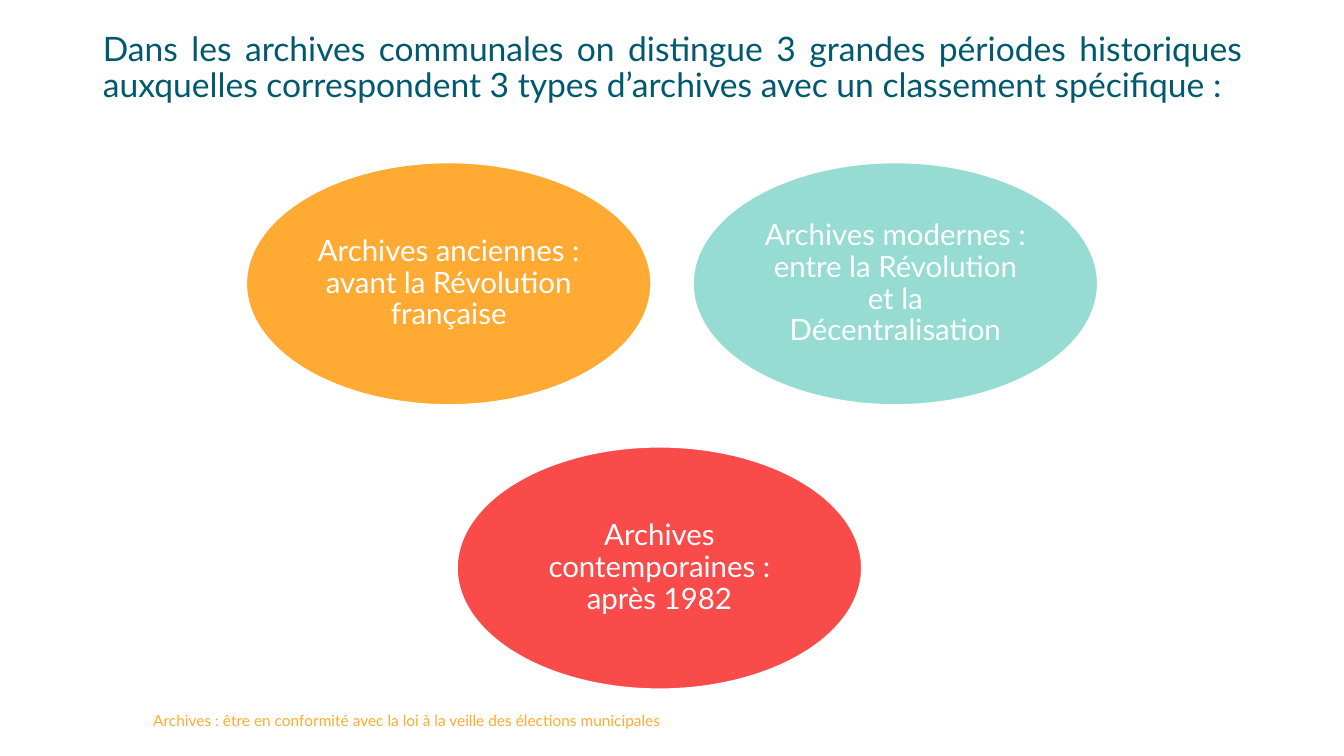
"""Build the slide on the three historical periods of communal archives."""
from dataclasses import dataclass

from pptx import Presentation
from pptx.dml.color import RGBColor
from pptx.enum.shapes import MSO_SHAPE
from pptx.enum.text import MSO_ANCHOR, MSO_AUTO_SIZE, PP_ALIGN
from pptx.util import Inches, Pt


@dataclass(frozen=True)
class Theme:
    font: str = "Lato"
    teal: str = "00596E"
    orange: str = "FFAA32"
    mint: str = "96DCD2"
    red: str = "FA4B4B"
    white: str = "FFFFFF"
    title_size: int = 24
    period_size: int = 21
    footer_size: int = 11
    line_spacing: float = 0.9


class SlideBuilder:
    def __init__(self, slide, theme):
        self.slide = slide
        self.theme = theme

    def set_text(self, shape, text, size, color, alignment, anchor, inset=None):
        text_frame = shape.text_frame
        text_frame.text = text
        text_frame.word_wrap = True
        text_frame.auto_size = MSO_AUTO_SIZE.NONE
        text_frame.vertical_anchor = anchor
        if inset is not None:
            text_frame.margin_left = text_frame.margin_right = Inches(inset)
            text_frame.margin_top = text_frame.margin_bottom = Inches(inset)
        paragraph = text_frame.paragraphs[0]
        paragraph.alignment = alignment
        paragraph.line_spacing = self.theme.line_spacing
        font = paragraph.runs[0].font
        font.name = self.theme.font
        font.size = Pt(size)
        font.color.rgb = RGBColor.from_string(color)

    def title(self, text, left, top, width, height):
        shape = self.slide.shapes.title
        shape.left, shape.top = Inches(left), Inches(top)
        shape.width, shape.height = Inches(width), Inches(height)
        self.set_text(shape, text, self.theme.title_size, self.theme.teal,
                      PP_ALIGN.JUSTIFY, MSO_ANCHOR.TOP)

    def period(self, text, left, top, color, width=4.02, height=2.41):
        shape = self.slide.shapes.add_shape(
            MSO_SHAPE.OVAL, Inches(left), Inches(top), Inches(width), Inches(height))
        shape.shadow.inherit = False
        shape.fill.solid()
        shape.fill.fore_color.rgb = RGBColor.from_string(color)
        shape.line.color.rgb = RGBColor.from_string(self.theme.white)
        shape.line.width = Pt(1.5)
        self.set_text(shape, text, self.theme.period_size, self.theme.white,
                      PP_ALIGN.CENTER, MSO_ANCHOR.MIDDLE, 0.09)

    def footer(self, text, left, top, width, height):
        shape = self.slide.shapes.add_textbox(
            Inches(left), Inches(top), Inches(width), Inches(height))
        self.set_text(shape, text, self.theme.footer_size, self.theme.orange,
                      PP_ALIGN.LEFT, MSO_ANCHOR.MIDDLE, 0)
        shape.text_frame.paragraphs[0].line_spacing = 1.0


def main():
    presentation = Presentation()
    presentation.slide_width = Inches(13.33)
    presentation.slide_height = Inches(7.5)
    theme = Theme()
    slide = presentation.slides.add_slide(presentation.slide_layouts[5])
    builder = SlideBuilder(slide, theme)

    builder.title(
        "Dans les archives communales on distingue 3 grandes périodes historiques "
        "auxquelles correspondent 3 types d’archives avec un classement spécifique :",
        0.92, 0.27, 11.5, 1.23)
    builder.footer(
        "Archives : être en conformité avec la loi à la veille des élections municipales",
        1.52, 6.95, 7.4, 0.4)

    periods = [
        ("Archives anciennes : avant la Révolution française", 2.44, 1.61, theme.orange),
        ("Archives modernes : entre la Révolution et la Décentralisation",
         6.87, 1.61, theme.mint),
        ("Archives contemporaines : après 1982", 4.53, 4.43, theme.red),
    ]
    for text, left, top, color in periods:
        builder.period(text, left, top, color)

    presentation.save("out.pptx")


if __name__ == "__main__":
    main()
